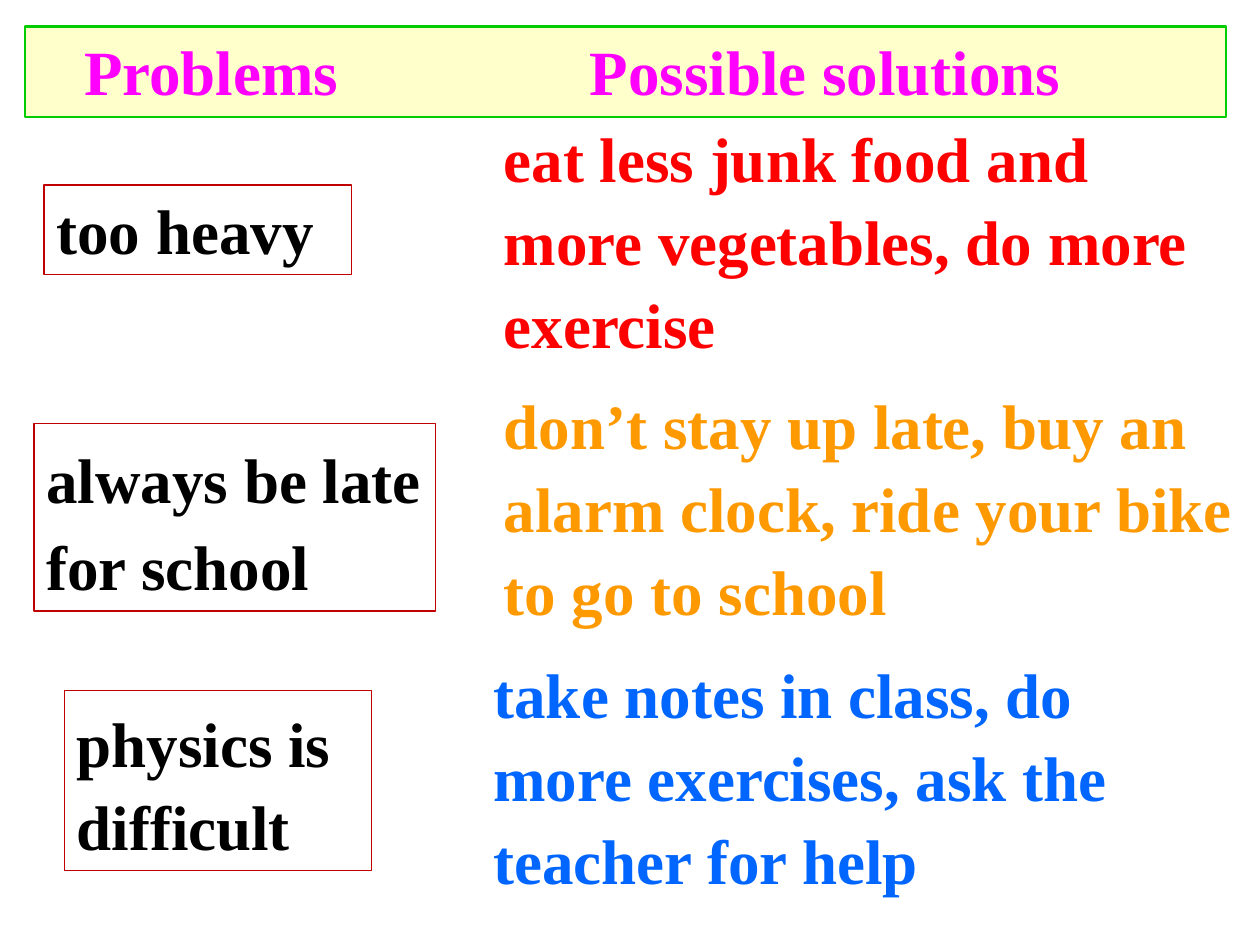
from typing import NamedTuple

from pptx import Presentation
from pptx.dml.color import RGBColor as RGB
from pptx.enum.shapes import MSO_SHAPE as Shape
from pptx.enum.text import MSO_ANCHOR as Anchor, MSO_AUTO_SIZE as Fit, PP_ALIGN as Align
from pptx.oxml.ns import qn
from pptx.util import Pt

BLACK = RGB(0x00, 0x00, 0x00)
RED = RGB(0xFF, 0x00, 0x00)
ORANGE = RGB(0xFF, 0x99, 0x00)
BLUE = RGB(0x00, 0x66, 0xFF)
PINK = RGB(0xFF, 0x00, 0xFF)
CREAM = RGB(0xFF, 0xFF, 0xCC)
GREEN = RGB(0x00, 0xCC, 0x00)
BRICK = RGB(0xC0, 0x00, 0x00)

FONT, SIZE = "Times New Roman", 36
TABS = 26.5, 315.5


class Box(NamedTuple):
    x: float
    y: float
    w: float
    h: float


class Issue(NamedTuple):
    text: str
    box: Box
    gap: float


class Remedy(NamedTuple):
    text: str
    box: Box
    color: RGB


ROWS = [
    (Issue("too heavy", Box(25.2, 105.8, 175.7, 51.1), 1),
     Remedy("eat less junk food and more vegetables, do more exercise",
            Box(280.8, 60.5, 422.6, 150.5), RED)),
    (Issue("always be late for school", Box(19.4, 241.9, 229.7, 107.3), 1.15),
     Remedy("don’t stay up late, buy an alarm clock, ride your bike to go to school",
            Box(280.8, 213.1, 439.2, 150.5), ORANGE)),
    (Issue("physics is difficult", Box(36.7, 394.6, 175.7, 103), 1.1),
     Remedy("take notes in class, do more exercises, ask the teacher for help",
            Box(275, 366.5, 408.2, 150.5), BLUE)),
]


def points(box: Box) -> list[Pt]:
    return [Pt(v) for v in box]


def write(shape, text: str, color: RGB, gap: float) -> None:
    frame = shape.text_frame
    frame.word_wrap = True
    frame.auto_size = Fit.NONE
    frame.vertical_anchor = Anchor.TOP
    frame.text = text
    para = frame.paragraphs[0]
    para.alignment = Align.LEFT
    para.line_spacing = gap
    font = para.font
    font.name, font.size, font.bold = FONT, Pt(SIZE), True
    font.color.rgb = color


def outline(shape, color: RGB, width: float) -> None:
    shape.line.color.rgb = color
    shape.line.width = Pt(width)


def add_head(slide) -> None:
    """Format the title as a bar with one tab stop per column heading."""
    head = slide.shapes.title
    head.left, head.top, head.width, head.height = points(Box(14.4, 15.1, 686.2, 51.8))
    head.fill.solid()
    head.fill.fore_color.rgb = CREAM
    outline(head, GREEN, 1.25)
    write(head, "\tProblems\tPossible solutions", PINK, 1)
    props = head.text_frame.paragraphs[0].font._element.getparent()
    stops = props.makeelement(qn("a:tabLst"), {})
    for pos in TABS:
        stop = props.makeelement(qn("a:tab"), {"pos": str(Pt(pos)), "algn": "l"})
        stops.append(stop)
    props.find(qn("a:defRPr")).addprevious(stops)


def add_issue(slide, issue: Issue) -> None:
    shape = slide.shapes.add_shape(Shape.RECTANGLE, *points(issue.box))
    shape.shadow.inherit = False
    shape.fill.background()
    outline(shape, BRICK, 0.75)
    write(shape, issue.text, BLACK, issue.gap)


def add_remedy(slide, remedy: Remedy) -> None:
    shape = slide.shapes.add_textbox(*points(remedy.box))
    write(shape, remedy.text, remedy.color, 1.1)


def main() -> None:
    deck = Presentation()
    deck.slide_width, deck.slide_height = Pt(720), Pt(540)
    slide = deck.slides.add_slide(deck.slide_layouts.get_by_name("Title Only"))
    add_head(slide)
    for issue, remedy in ROWS:
        add_issue(slide, issue)
        add_remedy(slide, remedy)
    deck.save("out.pptx")


if __name__ == "__main__":
    main()
